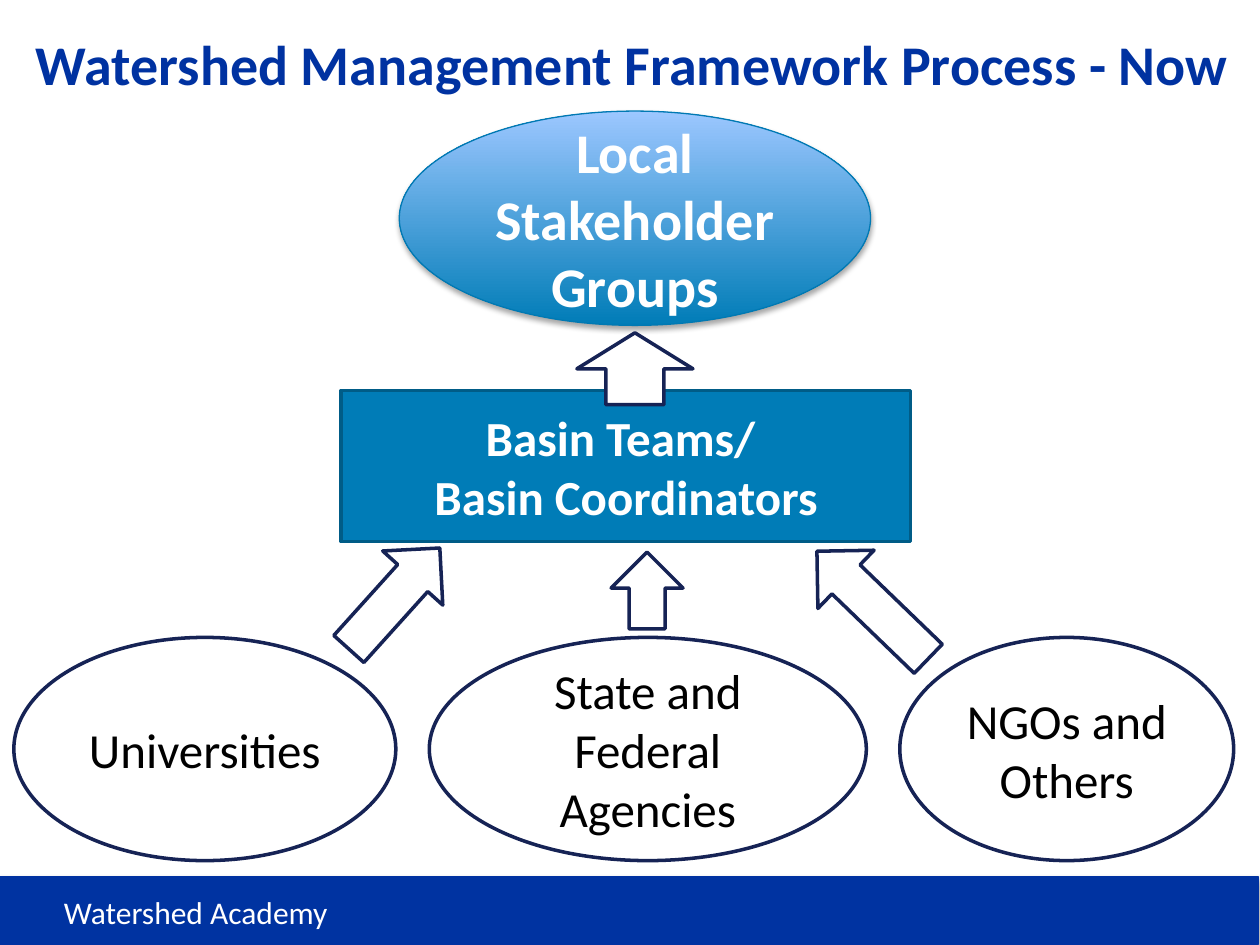
from dataclasses import dataclass

from pptx import Presentation
from pptx.dml.color import RGBColor
from pptx.enum.shapes import MSO_SHAPE
from pptx.enum.text import MSO_ANCHOR, PP_ALIGN
from pptx.util import Cm, Pt

OVAL, RECT = MSO_SHAPE.OVAL, MSO_SHAPE.RECTANGLE
UP, RIGHT = MSO_SHAPE.UP_ARROW, MSO_SHAPE.RIGHT_ARROW
CENTER, LEFT = PP_ALIGN.CENTER, PP_ALIGN.LEFT
MIDDLE = MSO_ANCHOR.MIDDLE


@dataclass(frozen=True)
class Theme:
    font: str = "Calibri"
    white: str = "FFFFFF"
    black: str = "000000"
    navy: str = "0032A1"
    band: str = "0033A1"
    teal: str = "007CB7"
    sky: str = "9CC7FF"
    rim: str = "0079B3"
    edge: str = "005C87"
    ink: str = "162355"
    large: int = 32
    body: int = 28
    small: int = 18
    thin: float = 0.75
    thick: float = 2


THEME = Theme()


def rgb(code):
    return RGBColor.from_string(code)


def inset(box, x, y, w, h):
    """Turn a place inside box into a place on the slide."""
    return box[0] + x, box[1] + y, w, h


def write(shape, lines, size, color, bold=False, align=CENTER, wrap=True):
    frame = shape.text_frame
    frame.text = "\n".join(lines)
    frame.word_wrap = wrap
    frame.vertical_anchor = MIDDLE
    style = {"name": THEME.font, "size": Pt(size), "bold": bold}
    for para in frame.paragraphs:
        para.alignment = align
        for run in para.runs:
            for key, value in style.items():
                setattr(run.font, key, value)
            run.font.color.rgb = rgb(color)


def draw(slide, kind, box, fill=THEME.white, line=THEME.ink,
         width=THEME.thick, turn=0, shade=False):
    """Add a shape; a pair of colours as fill runs from bottom to top."""
    shape = slide.shapes.add_shape(kind, *map(Cm, box))
    shape.rotation = turn
    if not shade:
        shape.shadow.inherit = False
    if isinstance(fill, tuple):
        shape.fill.gradient()
        shape.fill.gradient_angle = 90
        for stop, color in zip(shape.fill.gradient_stops, fill):
            stop.color.rgb = rgb(color)
    else:
        shape.fill.solid()
        shape.fill.fore_color.rgb = rgb(fill)
    shape.line.color.rgb = rgb(line)
    shape.line.width = Pt(width)
    return shape


def footer(slide, box):
    draw(slide, RECT, box, THEME.band, THEME.navy, THEME.thin, shade=True)
    label = slide.shapes.add_textbox(*map(Cm, inset(box, 1.07, 0.18, 8.53, 1.04)))
    write(label, ["Watershed Academy"], THEME.small, THEME.white, align=LEFT)


def title(slide, box):
    head = slide.shapes.title
    for key, value in zip(("left", "top", "width", "height"), box):
        setattr(head, key, Cm(value))
    write(head, ["Watershed Management Framework Process - Now"],
          THEME.large, THEME.navy, bold=True, wrap=False)


def groups(slide, box):
    oval = draw(slide, OVAL, box, (THEME.teal, THEME.sky), THEME.rim,
                THEME.thin, shade=True)
    write(oval, ["Local Stakeholder Groups"], THEME.large, THEME.white, bold=True)


def teams(slide, box):
    panel = draw(slide, RECT, box, THEME.teal, THEME.edge)
    write(panel, ["Basin Teams/ ", "Basin Coordinators"],
          THEME.body, THEME.white, bold=True)
    draw(slide, UP, inset(box, 4.75, -1.16, 2.34, 1.45))


def partners(slide, box):
    """Place a row of ovals with equal gaps, and the arrows above them."""
    row = [("Universities", 7.7), ("State and Federal Agencies", 8.81),
           ("NGOs and Others", 6.73)]
    gap = (box[2] - sum(width for _, width in row)) / (len(row) - 1)
    left = 0
    for name, width in row:
        oval = draw(slide, OVAL, inset(box, left, 0, width, box[3]))
        write(oval, [name], THEME.body, THEME.black)
        left += width + gap
    arrows = [(RIGHT, (6.3, -1.6, 2.74, 1.63), 312),
              (UP, (12.04, -1.72, 1.45, 1.55), 0),
              (RIGHT, (15.75, -1.47, 3.12, 1.63), 224)]
    for kind, place, turn in arrows:
        draw(slide, kind, inset(box, *place), turn=turn)


def main():
    deck = Presentation()
    deck.slide_width, deck.slide_height = Cm(25.4), Cm(19.05)
    slide = deck.slides.add_slide(deck.slide_layouts[5])
    footer(slide, (-0.03, 17.68, 25.4, 1.35))
    title(slide, (0.36, 0.46, 24.77, 1.63))
    groups(slide, (8.05, 2.24, 9.5, 4.32))
    teams(slide, (6.88, 7.87, 11.48, 3.05))
    partners(slide, (0.28, 12.85, 24.59, 4.5))
    deck.save("out.pptx")


if __name__ == "__main__":
    main()
